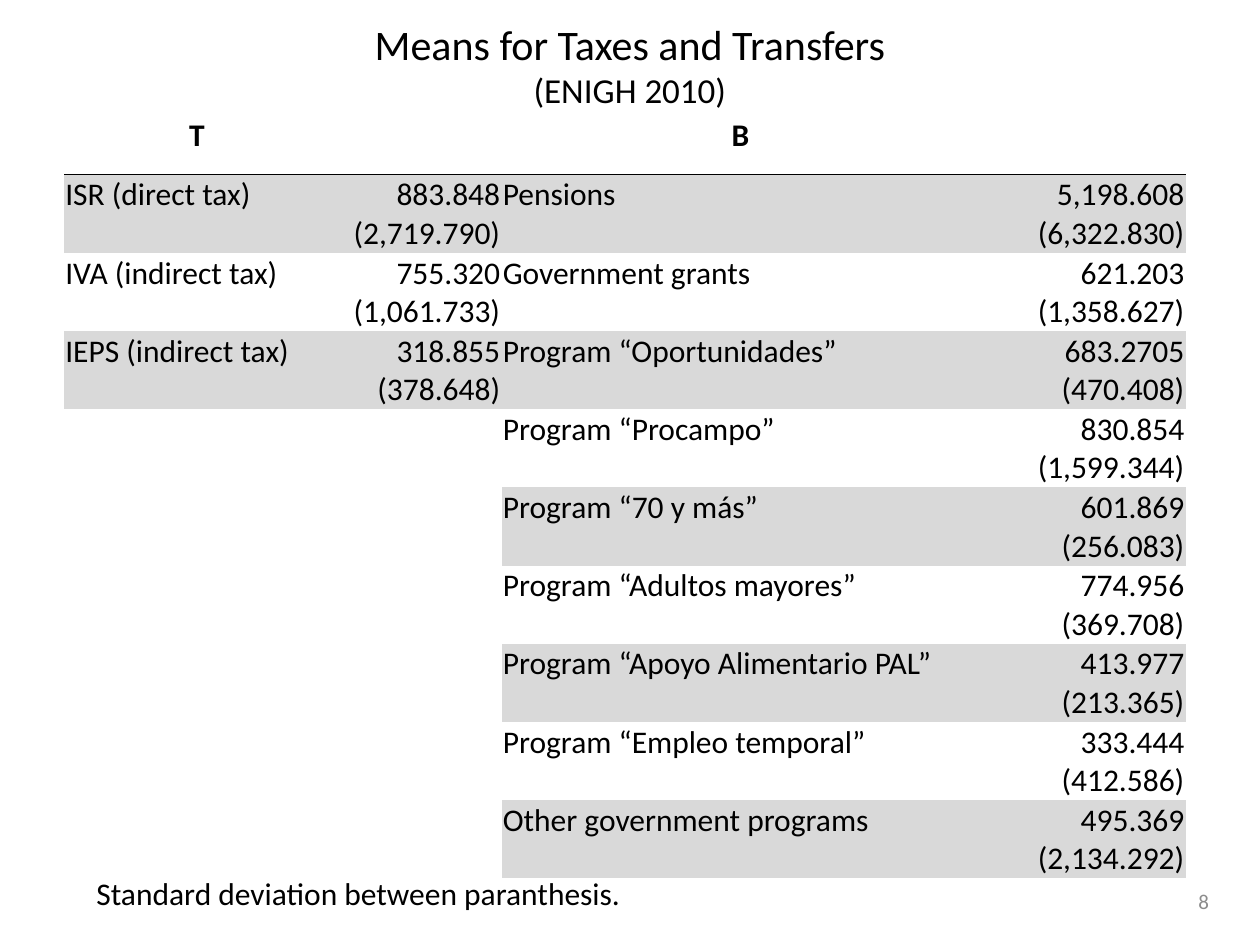
from lxml import etree
from pptx import Presentation
from pptx.dml.color import RGBColor
from pptx.enum.text import MSO_ANCHOR, PP_ALIGN
from pptx.oxml import parse_xml
from pptx.oxml.ns import nsdecls, qn
from pptx.util import Pt

# Content: name, mean, standard deviation
TITLE = "Means for Taxes and Transfers"
SOURCE = "(ENIGH 2010)"
FOOTNOTE = "Standard deviation between paranthesis."
PAGE = "8"
TAXES = [
    ("ISR (direct tax)", "883.848", "(2,719.790)"),
    ("IVA (indirect tax)", "755.320", "(1,061.733)"),
    ("IEPS (indirect tax)", "318.855", "(378.648)"),
]
BENEFITS = [
    ("Pensions", "5,198.608", "(6,322.830)"),
    ("Government grants", "621.203", "(1,358.627)"),
    ("Program “Oportunidades”", "683.2705", "(470.408)"),
    ("Program “Procampo”", "830.854", "(1,599.344)"),
    ("Program “70 y más”", "601.869", "(256.083)"),
    ("Program “Adultos mayores”", "774.956", "(369.708)"),
    ("Program “Apoyo Alimentario PAL”", "413.977", "(213.365)"),
    ("Program “Empleo temporal”", "333.444", "(412.586)"),
    ("Other government programs", "495.369", "(2,134.292)"),
]
GROUPS = [("T", TAXES, 0), ("B", BENEFITS, 2)]  # heading, rows, first column

FONT = "Calibri"
BLACK, GREY, BAND = "000000", "8C8C8C", "D9D9D9"
COLUMN_WIDTHS = [152, 98, 273, 118]
HEADER_HEIGHT, ROW_HEIGHT = 33.8, 44.7
PLAIN_STYLE = "{2D5ABB26-0587-4C30-8999-92F81FD0307C}"


def color(value):
    return RGBColor.from_string(value)


def write(frame, text, size=18, align=PP_ALIGN.LEFT, ink=BLACK, bold=False):
    frame.text = text
    for paragraph in frame.paragraphs:
        paragraph.alignment = align
        for run in paragraph.runs:
            run.font.name = FONT
            run.font.size = Pt(size)
            run.font.bold = bold
            run.font.color.rgb = color(ink)


def add_text(slide, box, text, anchor=MSO_ANCHOR.MIDDLE, wrap=True, **style):
    frame = slide.shapes.add_textbox(*map(Pt, box)).text_frame
    frame.word_wrap = wrap
    frame.vertical_anchor = anchor
    write(frame, text, **style)
    return frame


def rule_below(cell):
    line = parse_xml(
        f'<a:lnB {nsdecls("a")} w="{Pt(1)}"><a:solidFill>'
        f'<a:srgbClr val="{BLACK}"/></a:solidFill></a:lnB>')
    cell._tc.get_or_add_tcPr().insert(0, line)


def add_means_table(slide):
    height = HEADER_HEIGHT + ROW_HEIGHT * len(BENEFITS)
    frame = slide.shapes.add_table(
        len(BENEFITS) + 1, len(COLUMN_WIDTHS),
        Pt(36.6), Pt(66), Pt(sum(COLUMN_WIDTHS)), Pt(height))
    table = frame.table
    table.first_row = table.horz_banding = False
    table._tbl.tblPr.find(qn("a:tableStyleId")).text = PLAIN_STYLE

    for column, width in zip(table.columns, COLUMN_WIDTHS):
        column.width = Pt(width)
    for index, row in enumerate(table.rows):
        row.height = Pt(ROW_HEIGHT if index else HEADER_HEIGHT)
    for cell in table.iter_cells():
        cell.margin_left = cell.margin_right = cell.margin_top = Pt(0.75)
        cell.margin_bottom = 0
        cell.fill.background()

    # Each group fills a name column and a value column
    for heading, rows, first in GROUPS:
        write(table.cell(0, first).text_frame, heading,
              align=PP_ALIGN.CENTER, bold=True)
        for index, (name, mean, deviation) in enumerate(rows, start=1):
            name_cell = table.cell(index, first)
            value_cell = table.cell(index, first + 1)
            write(name_cell.text_frame, name)
            write(value_cell.text_frame, f"{mean}\n{deviation}",
                  align=PP_ALIGN.RIGHT)
            if index % 2:
                for cell in (name_cell, value_cell):
                    cell.fill.solid()
                    cell.fill.fore_color.rgb = color(BAND)

    for cell in table.rows[0].cells:
        rule_below(cell)


def main():
    deck = Presentation()
    deck.slide_width, deck.slide_height = Pt(720), Pt(540)
    slide = deck.slides.add_slide(deck.slide_layouts[6])

    # Title with its smaller second line
    title = add_text(slide, (36, -8, 648, 90), f"{TITLE}\v{SOURCE}",
                     size=24, align=PP_ALIGN.CENTER)
    title.paragraphs[0].runs[1].font.size = Pt(20)

    add_means_table(slide)

    # Page number and footnote
    add_text(slide, (530, 500.5, 168, 28.8), PAGE, size=12,
             align=PP_ALIGN.RIGHT, ink=GREY)
    add_text(slide, (48, 496, 317.5, 29), FOOTNOTE,
             anchor=MSO_ANCHOR.TOP, wrap=False)

    deck.save("out.pptx")


if __name__ == "__main__":
    main()
